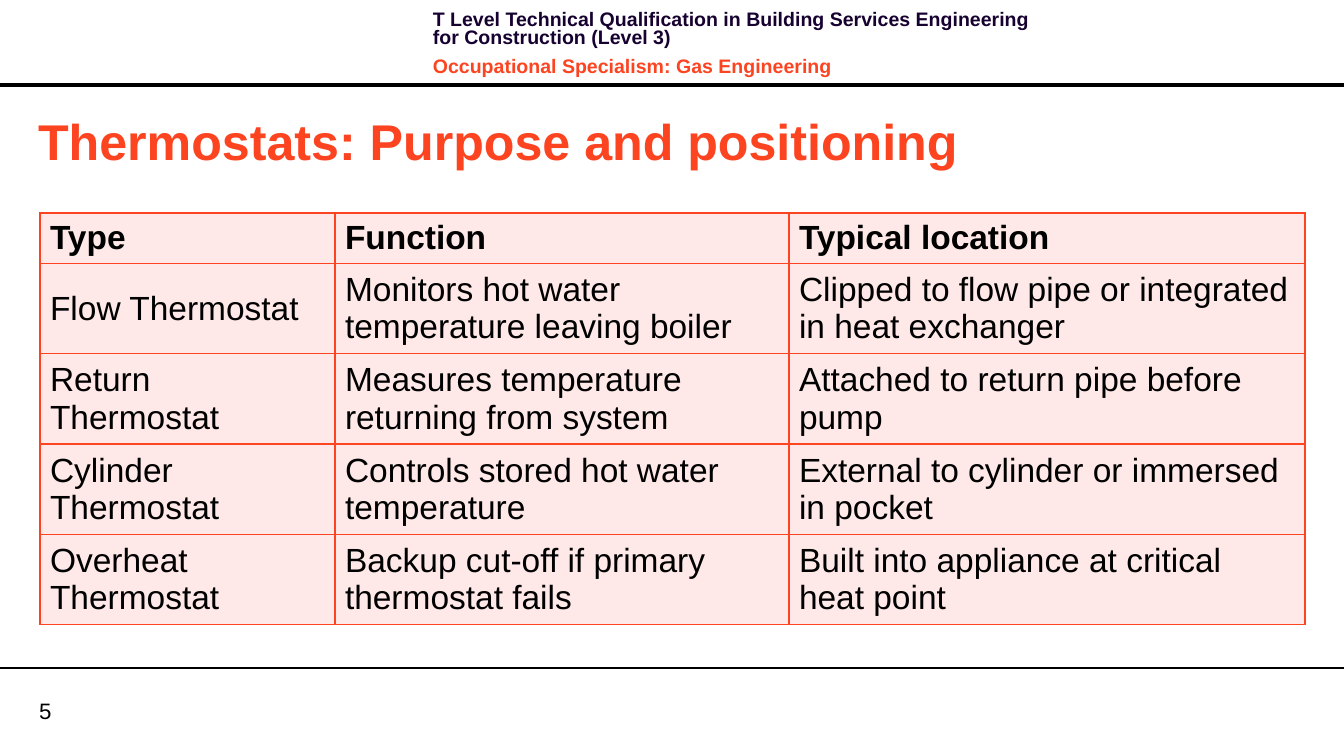
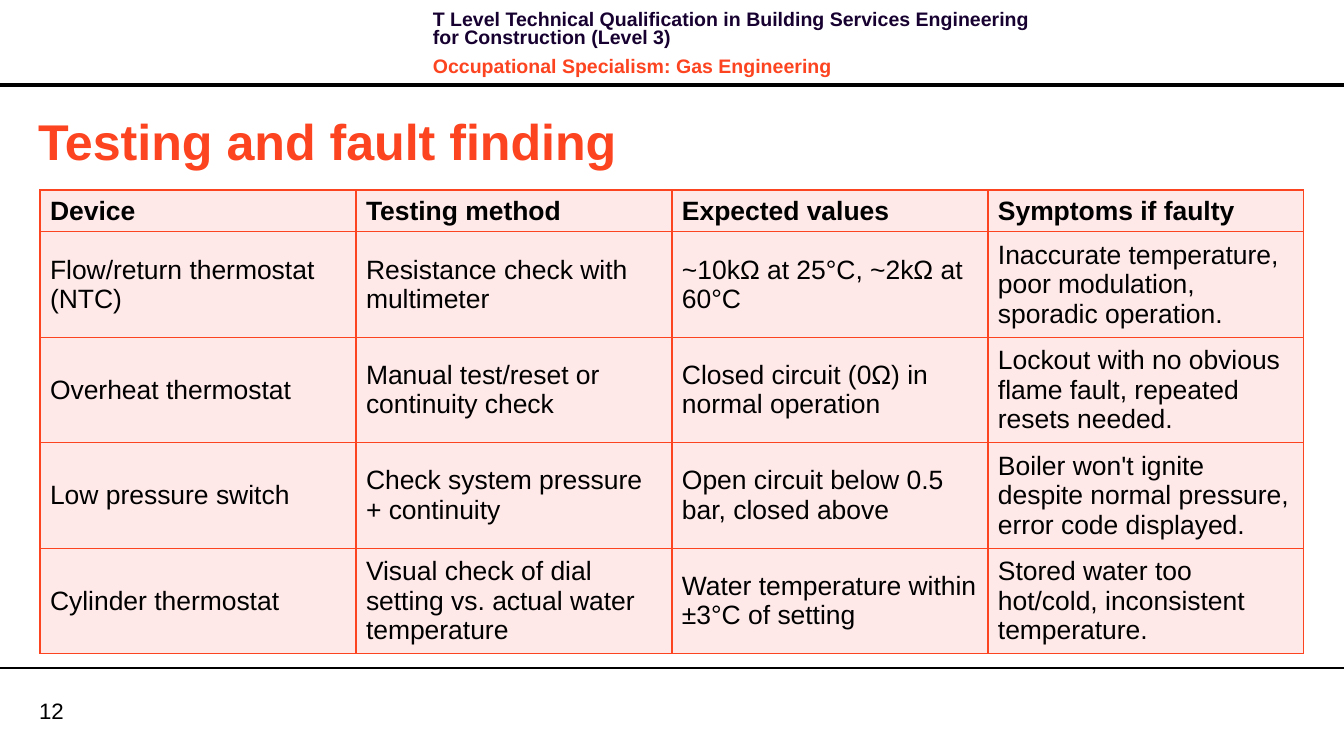
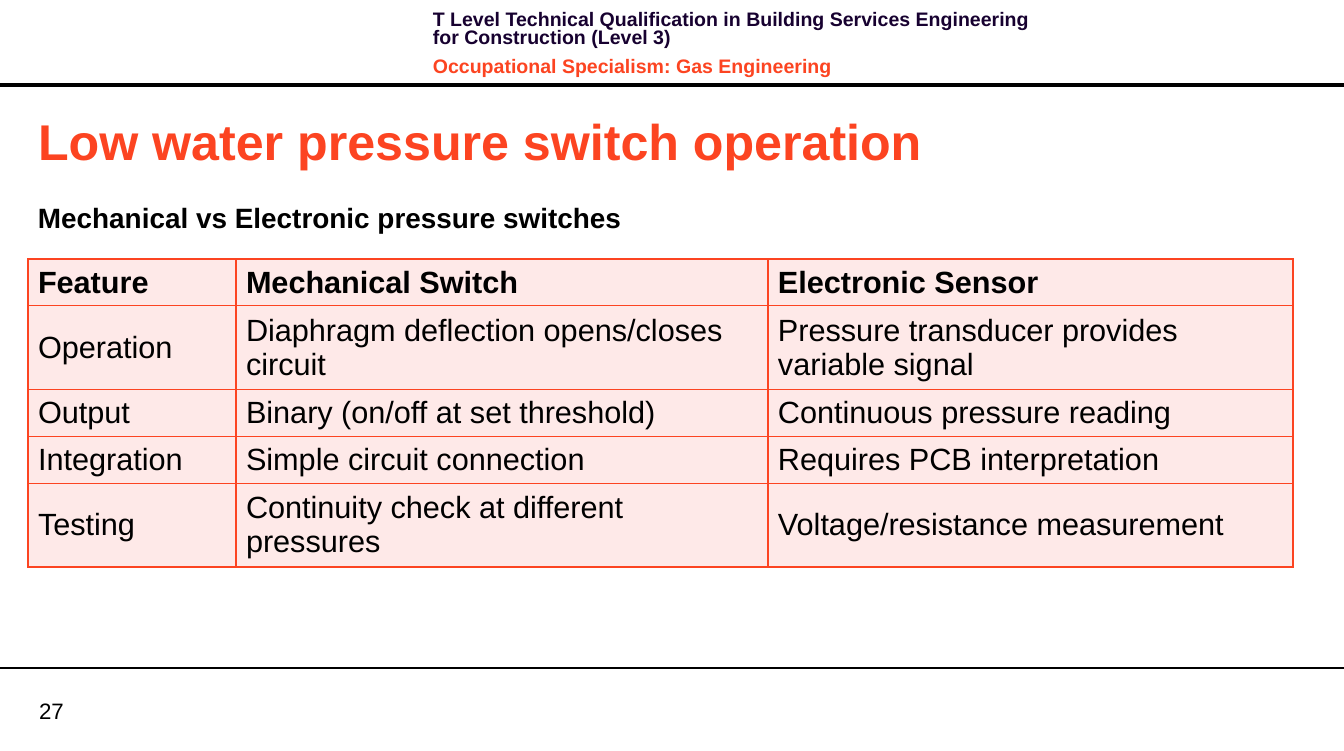
from lxml import etree
from pptx import Presentation
from pptx.dml.color import RGBColor
from pptx.enum.shapes import MSO_CONNECTOR, MSO_SHAPE
from pptx.enum.text import MSO_ANCHOR, MSO_AUTO_SIZE, PP_ALIGN
from pptx.oxml.ns import qn
from pptx.util import Pt

PX = 9108
WIDTH, HEIGHT = 1344, 751
FONT = "Arial"
COLORS = {"black": "000000", "white": "FFFFFF", "accent": "FC4421",
          "navy": "170130", "cell": "FEE9E8"}
BORDER_WIDTH = Pt(1)
TITLE_ONLY = 5
LEFT = PP_ALIGN.LEFT
MIDDLE = MSO_ANCHOR.MIDDLE
NO_AUTOFIT = MSO_AUTO_SIZE.NONE
RECTANGLE = MSO_SHAPE.RECTANGLE
STRAIGHT = MSO_CONNECTOR.STRAIGHT

COURSE = "T Level Technical Qualification in Building Services Engineering for Construction (Level 3)"
SPECIALISM = "Occupational Specialism: Gas Engineering"

SLIDES = [
    {
        "title": "Thermostats: Purpose and positioning",
        "number": "5",
        "origin": (40, 213),
        "size": 24,
        "columns": [295, 454, 516],
        "heights": [48, 84, 84, 84, 84],
        "rows": [
            ["Type", "Function", "Typical location"],
            ["Flow Thermostat", "Monitors hot water temperature leaving boiler",
             "Clipped to flow pipe or integrated in heat exchanger"],
            ["Return Thermostat", "Measures temperature returning from system",
             "Attached to return pipe before pump"],
            ["Cylinder Thermostat", "Controls stored hot water temperature",
             "External to cylinder or immersed in pocket"],
            ["Overheat Thermostat", "Backup cut-off if primary thermostat fails",
             "Built into appliance at critical heat point"],
        ],
    },
    {
        "title": "Testing and fault finding",
        "number": "12",
        "origin": (40, 190),
        "size": 19,
        "columns": [316] * 4,
        "heights": [39, 98, 98, 98, 98],
        "rows": [
            ["Device", "Testing method", "Expected values", "Symptoms if faulty"],
            ["Flow/return thermostat (NTC)", "Resistance check with multimeter",
             "~10kΩ at 25°C, ~2kΩ at 60°C",
             "Inaccurate temperature, poor modulation, sporadic operation."],
            ["Overheat thermostat", "Manual test/reset or continuity check",
             "Closed circuit (0Ω) in normal operation",
             "Lockout with no obvious flame fault, repeated resets needed."],
            ["Low pressure switch", "Check system pressure + continuity",
             "Open circuit below 0.5 bar, closed above",
             "Boiler won't ignite despite normal pressure, error code displayed."],
            ["Cylinder thermostat", "Visual check of dial setting vs. actual water temperature",
             "Water temperature within ±3°C of setting",
             "Stored water too hot/cold, inconsistent temperature."],
        ],
    },
    {
        "title": "Low water pressure switch operation",
        "number": "27",
        "subtitle": "Mechanical vs Electronic pressure switches",
        "origin": (28, 259),
        "size": 22,
        "columns": [208, 532, 525],
        "heights": [44, 78, 44, 44, 78],
        "rows": [
            ["Feature", "Mechanical Switch", "Electronic Sensor"],
            ["Operation", "Diaphragm deflection opens/closes circuit",
             "Pressure transducer provides variable signal"],
            ["Output", "Binary (on/off at set threshold)", "Continuous pressure reading"],
            ["Integration", "Simple circuit connection", "Requires PCB interpretation"],
            ["Testing", "Continuity check at different pressures",
             "Voltage/resistance measurement"],
        ],
    },
]


def px(*lengths):
    return [length * PX for length in lengths]


def write(paragraph, text, size=16, color="black", bold=False, line=None, before=0, after=0):
    paragraph.text = text
    paragraph.alignment = LEFT
    paragraph.space_before = Pt(before)
    paragraph.space_after = Pt(after)
    if line:
        paragraph.line_spacing = Pt(line)
    font = paragraph.runs[0].font
    font.name = FONT
    font.size = Pt(size)
    font.bold = bold
    font.color.rgb = RGBColor.from_string(COLORS[color])


presentation = Presentation()
presentation.slide_width, presentation.slide_height = px(WIDTH, HEIGHT)
layout = presentation.slide_layouts[TITLE_ONLY]
background = presentation.slide_master.background.fill
background.solid()
background.fore_color.rgb = RGBColor.from_string(COLORS["white"])

for content in SLIDES:
    slide = presentation.slides.add_slide(layout)
    shapes = slide.shapes

    title = shapes.title
    title.left, title.top, title.width, title.height = px(28, 105, 1277, 71)
    title.text_frame.auto_size = NO_AUTOFIT
    title.text_frame.vertical_anchor = MIDDLE
    write(title.text_frame.paragraphs[0], content["title"], size=36, color="accent", bold=True)

    band = shapes.add_shape(RECTANGLE, *px(0, 83, WIDTH, 4))
    band.shadow.inherit = False
    band.fill.solid()
    band.fill.fore_color.rgb = RGBColor.from_string(COLORS["black"])
    band.line.fill.background()

    header = shapes.add_textbox(*px(423, 7, 640, 64)).text_frame
    header.word_wrap = True
    write(header.paragraphs[0], COURSE, size=14, color="navy", bold=True, line=13.1, after=4)
    write(header.add_paragraph(), SPECIALISM, size=14, color="accent", bold=True,
          line=13.1, before=4, after=4)

    rule = shapes.add_connector(STRAIGHT, *px(0, 668, WIDTH, 668))
    rule.line.width = Pt(0.75)
    rule.line.color.rgb = RGBColor.from_string(COLORS["black"])
    etree.SubElement(rule._element.spPr, qn("a:effectLst"))

    footer = shapes.add_textbox(*px(39, 697, 64, 27)).text_frame
    footer.margin_left = footer.margin_right = footer.margin_top = footer.margin_bottom = 0
    footer.word_wrap = True
    footer.vertical_anchor = MIDDLE
    write(footer.paragraphs[0], content["number"])

    if "subtitle" in content:
        subtitle = shapes.add_textbox(*px(28, 196, 673, 44)).text_frame
        subtitle.word_wrap = True
        write(subtitle.paragraphs[0], content["subtitle"], size=20, bold=True)

    rows, columns, heights = content["rows"], content["columns"], content["heights"]
    table = shapes.add_table(len(rows), len(columns),
                             *px(*content["origin"], sum(columns), sum(heights))).table
    table.horz_banding = False
    for column, width in zip(table.columns, columns):
        column.width = width * PX
    for row_index, (row, height, texts) in enumerate(zip(table.rows, heights, rows)):
        row.height = height * PX
        for cell, text in zip(row.cells, texts):
            properties = cell._tc.get_or_add_tcPr()
            for side in ("lnL", "lnR", "lnT", "lnB"):
                border = etree.SubElement(properties, qn(f"a:{side}"), w=str(BORDER_WIDTH))
                border_fill = etree.SubElement(border, qn("a:solidFill"))
                etree.SubElement(border_fill, qn("a:srgbClr"), val=COLORS["accent"])
            cell.fill.solid()
            cell.fill.fore_color.rgb = RGBColor.from_string(COLORS["cell"])
            cell.vertical_anchor = MIDDLE
            write(cell.text_frame.paragraphs[0], text, size=content["size"], bold=row_index == 0)

presentation.save("out.pptx")
